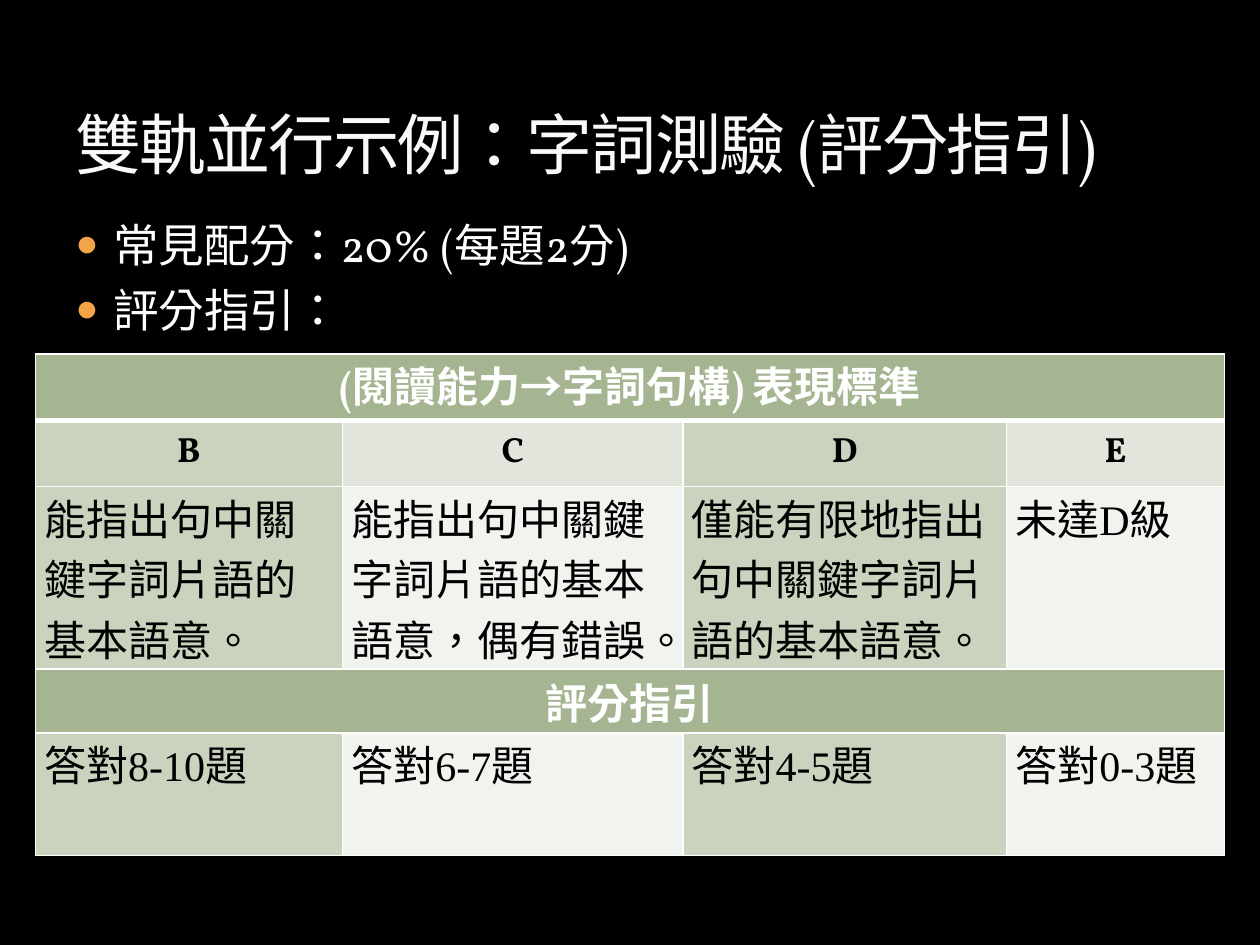
from dataclasses import dataclass

from lxml import etree
from pptx import Presentation
from pptx.dml.color import RGBColor
from pptx.enum import lang, text
from pptx.oxml import ns
from pptx.util import Inches, Pt


@dataclass(frozen=True)
class Theme:
    background: str = "000000"
    title: str = "F9F9F9"
    title_outline: str = "3C4422"
    light: str = "FFFFFF"
    dark: str = "000000"
    bullet: str = "F3A447"
    band: str = "A5B592"
    column: str = "C9D3BE"
    pale_header: str = "E1E5DC"
    pale: str = "F0F3EE"
    display_font: str = "Vollkorn"
    table_font: str = "Times New Roman"
    fallback_font: str = "Calibri"
    title_size: float = 37.8
    body_size: float = 26
    table_size: float = 24
    grade_size: float = 20


THEME = Theme()


@dataclass(frozen=True)
class Style:
    font: str
    size: float
    color: str
    bold: bool = False


TITLE = Style(THEME.display_font, THEME.title_size, THEME.title)
BODY = Style(THEME.display_font, THEME.body_size, THEME.light)
BANNER = Style(THEME.display_font, THEME.table_size, THEME.light, True)
GRADE = Style(THEME.display_font, THEME.grade_size, THEME.dark, True)
DETAIL = Style(THEME.table_font, THEME.table_size, THEME.dark)
DETAIL_FALLBACK = Style(THEME.fallback_font, THEME.table_size, THEME.dark)


@dataclass(frozen=True)
class TableRow:
    height: float
    style: Style
    texts: tuple
    fills: tuple
    centered: bool = False
    bottom_line: float = 1


COLUMN_WIDTHS = (2.44, 2.7, 2.57, 1.73)
HEADER_FILLS = (THEME.column, THEME.pale_header) * 2
DETAIL_FILLS = (THEME.column, THEME.pale) * 2
ROWS = (
    TableRow(0.53, BANNER, ("(閱讀能力→字詞句構) 表現標準",), (THEME.band,), True, 3),
    TableRow(0.52, GRADE, ("B", "C", "D", "E"), HEADER_FILLS, True),
    TableRow(1.45, DETAIL, (
        "能指出句中關鍵字詞片語的基本語意。",
        (("能指出句中關鍵字詞片語的基本語意，", DETAIL), ("偶", DETAIL_FALLBACK), ("有錯誤。", DETAIL)),
        "僅能有限地指出句中關鍵字詞片語的基本語意。",
        "未達D級",
    ), DETAIL_FILLS),
    TableRow(0.51, BANNER, ("評分指引",), (THEME.band,), True),
    TableRow(0.97, DETAIL, ("答對8-10題", "答對6-7題", "答對4-5題", "答對0-3題"), DETAIL_FILLS),
)


def add_element(parent, tag: str, **attributes):
    element = etree.SubElement(parent, ns.qn(tag))
    for name, value in attributes.items():
        element.set(name, str(value))
    return element


def add_solid_fill(parent, color: str):
    return add_element(add_element(parent, "a:solidFill"), "a:srgbClr", val=color)


def add_run(paragraph, wording: str, style: Style):
    run = paragraph.add_run()
    run.text = wording
    run.font.name = style.font
    run.font.size = Pt(style.size)
    run.font.bold = style.bold
    run.font.color.rgb = RGBColor.from_string(style.color)
    run.font.language_id = lang.MSO_LANGUAGE_ID.TRADITIONAL_CHINESE
    return run


def add_text_frame(slide, left: float, top: float, width: float, height: float):
    box = slide.shapes.add_textbox(Inches(left), Inches(top), Inches(width), Inches(height))
    box.text_frame.word_wrap = True
    return box.text_frame


def add_title(slide, wording: str) -> None:
    frame = add_text_frame(slide, 0.5, 0.17, 9, 1.33)
    frame.vertical_anchor = text.MSO_ANCHOR.BOTTOM
    run = add_run(frame.paragraphs[0], wording, TITLE)
    properties = run.font._element
    properties.set("spc", "-100")
    outline = etree.Element(ns.qn("a:ln"), w=str(Pt(0.25)))
    add_element(add_solid_fill(outline, THEME.title_outline), "a:alpha", val=25000)
    properties.insert(0, outline)


def add_bullets(slide, items: tuple) -> None:
    frame = add_text_frame(slide, 0.5, 1.67, 9, 5)
    for index, item in enumerate(items):
        paragraph = frame.add_paragraph() if index else frame.paragraphs[0]
        paragraph.space_before = Pt(6)
        properties = paragraph._p.get_or_add_pPr()
        properties.set("marL", str(Inches(0.3)))
        properties.set("indent", str(-Inches(0.3)))
        add_element(add_element(properties, "a:buClr"), "a:srgbClr", val=THEME.bullet)
        add_element(properties, "a:buSzPct", val=85000)
        add_element(properties, "a:buFont", typeface=THEME.table_font)
        add_element(properties, "a:buChar", char="●")
        add_run(paragraph, item, BODY)


def set_borders(cell, top: float, bottom: float) -> None:
    properties = cell._tc.get_or_add_tcPr()
    widths = {"a:lnL": 1, "a:lnR": 1, "a:lnT": top, "a:lnB": bottom}
    for position, (tag, width) in enumerate(widths.items()):
        line = etree.Element(ns.qn(tag), w=str(Pt(width)))
        add_solid_fill(line, THEME.light)
        properties.insert(position, line)


def fill_cell(cell, content, row: TableRow) -> None:
    cell.margin_left = cell.margin_right = Inches(0.07)
    cell.margin_top = cell.margin_bottom = 0
    paragraph = cell.text_frame.paragraphs[0]
    if row.centered:
        cell.vertical_anchor = text.MSO_ANCHOR.MIDDLE
        paragraph.alignment = text.PP_ALIGN.CENTER
    runs = ((content, row.style),) if isinstance(content, str) else content
    for wording, style in runs:
        add_run(paragraph, wording, style)


def add_rubric(slide, rows: tuple) -> None:
    count = len(COLUMN_WIDTHS)
    height = sum(row.height for row in rows)
    table = slide.shapes.add_table(len(rows), count, Inches(0.28), Inches(2.81),
                                   Inches(sum(COLUMN_WIDTHS)), Inches(height)).table
    for column, width in zip(table.columns, COLUMN_WIDTHS):
        column.width = Inches(width)
    top_line = 1
    for index, row in enumerate(rows):
        table.rows[index].height = Inches(row.height)
        cells = [table.cell(index, column) for column in range(count)]
        if len(row.texts) == 1:
            cells[0].merge(cells[-1])
        for cell, fill in zip(cells, row.fills * (count // len(row.fills))):
            cell.fill.solid()
            cell.fill.fore_color.rgb = RGBColor.from_string(fill)
            set_borders(cell, top_line, row.bottom_line)
        for cell, content in zip(cells, row.texts):
            fill_cell(cell, content, row)
        top_line = row.bottom_line


def main() -> None:
    presentation = Presentation()
    presentation.slide_width, presentation.slide_height = Inches(10), Inches(7.5)
    slide = presentation.slides.add_slide(presentation.slide_layouts[6])
    slide.background.fill.solid()
    slide.background.fill.fore_color.rgb = RGBColor.from_string(THEME.background)

    # Heading and key points
    add_bullets(slide, ("常見配分：20% (每題2分)", "評分指引："))
    add_title(slide, "雙軌並行示例：字詞測驗 (評分指引)")

    # Performance levels and marking guide
    add_rubric(slide, ROWS)
    presentation.save("out.pptx")


if __name__ == "__main__":
    main()
